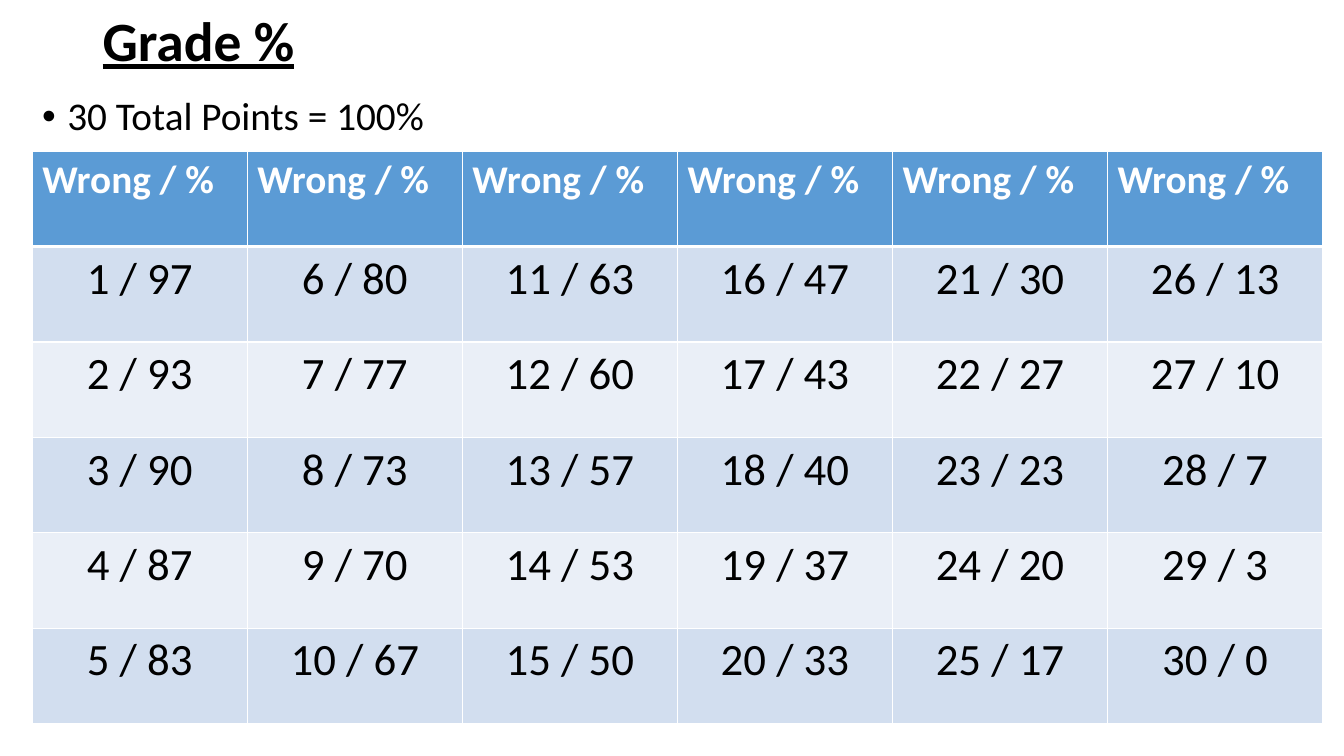
from dataclasses import dataclass

from lxml import etree
from pptx import Presentation
from pptx.dml.color import RGBColor
from pptx.enum.text import MSO_ANCHOR, PP_ALIGN
from pptx.oxml.ns import qn
from pptx.slide import Slide
from pptx.table import _Cell
from pptx.text.text import _Paragraph
from pptx.util import Inches, Pt

LEFT, CENTER = PP_ALIGN.LEFT, PP_ALIGN.CENTER
TOP, MIDDLE = MSO_ANCHOR.TOP, MSO_ANCHOR.MIDDLE

TOTAL_POINTS = 30
COLUMNS = 6
GRADE_ROWS = TOTAL_POINTS // COLUMNS


@dataclass(frozen=True)
class Theme:
    font: str = "Calibri"
    text: str = "000000"
    white: str = "FFFFFF"
    header: str = "5B9BD5"
    bands: tuple[str, str] = ("D2DEEF", "EAEFF7")
    title_size: float = 39.6
    body_size: float = 28
    grade_size: float = 32
    border: float = 1
    header_border: float = 3


@dataclass(frozen=True)
class TextStyle:
    size: float
    color: str
    bold: bool = False
    underline: bool = False
    align: PP_ALIGN = LEFT


@dataclass(frozen=True)
class TextBox:
    text: str
    left: float
    top: float
    width: float
    height: float
    anchor: MSO_ANCHOR
    style: TextStyle
    bulleted: bool = False


THEME = Theme()
HEADER_STYLE = TextStyle(THEME.body_size, THEME.white, bold=True)
GRADE_STYLE = TextStyle(THEME.grade_size, THEME.text, align=CENTER)
TEXT_BOXES = (
    TextBox("Grade %", 0.92, 0.08, 11.5, 0.7, MIDDLE,
            TextStyle(THEME.title_size, THEME.text, bold=True, underline=True)),
    TextBox(f"{TOTAL_POINTS} Total Points = 100%", 0.32, 0.91, 12.1, 0.59, TOP,
            TextStyle(THEME.body_size, THEME.text), bulleted=True),
)


def write_text(para: _Paragraph, text: str, style: TextStyle) -> None:
    para.text = text
    para.alignment = style.align
    font = para.font
    font.name = THEME.font
    font.size = Pt(style.size)
    font.bold = style.bold
    font.underline = style.underline
    font.color.rgb = RGBColor.from_string(style.color)


def add_bullet(para: _Paragraph) -> None:
    properties = para._p.get_or_add_pPr()
    properties.set("marL", str(Inches(0.25)))
    properties.set("indent", str(-Inches(0.25)))
    font = etree.Element(qn("a:buFont"), typeface="Arial")
    bullet = etree.Element(qn("a:buChar"), char="•")
    default_run = properties.find(qn("a:defRPr"))
    default_run.addprevious(font)
    default_run.addprevious(bullet)


def add_text_box(page: Slide, item: TextBox) -> None:
    box = page.shapes.add_textbox(Inches(item.left), Inches(item.top),
                                  Inches(item.width), Inches(item.height))
    frame = box.text_frame
    frame.word_wrap = True
    frame.vertical_anchor = item.anchor
    para = frame.paragraphs[0]
    write_text(para, item.text, item.style)
    para.line_spacing = 0.9
    if item.bulleted:
        para.space_before = Pt(10)
        add_bullet(para)


def set_borders(cell: _Cell, top: float, bottom: float) -> None:
    """Draw white borders; the side lines keep the theme width."""
    widths = {"L": THEME.border, "R": THEME.border, "T": top, "B": bottom}
    properties = cell._tc.get_or_add_tcPr()
    for position, (side, width) in enumerate(widths.items()):
        line = etree.Element(qn(f"a:ln{side}"), w=str(Pt(width)))
        fill = etree.SubElement(line, qn("a:solidFill"))
        etree.SubElement(fill, qn("a:srgbClr"), val=THEME.white)
        properties.insert(position, line)


def grade_text(wrong: int) -> str:
    percent = round(100 * (TOTAL_POINTS - wrong) / TOTAL_POINTS)
    return f"{wrong} / {percent}"


def fill_cell(cell: _Cell, row: int, column: int) -> None:
    is_header = row == 0
    if is_header:
        text, style, color = "Wrong / %", HEADER_STYLE, THEME.header
    else:
        text = grade_text(column * GRADE_ROWS + row)
        style, color = GRADE_STYLE, THEME.bands[(row - 1) % 2]
    write_text(cell.text_frame.paragraphs[0], text, style)
    cell.fill.solid()
    cell.fill.fore_color.rgb = RGBColor.from_string(color)
    set_borders(cell,
                top=THEME.header_border if row == 1 else THEME.border,
                bottom=THEME.header_border if is_header else THEME.border)


def add_grade_table(page: Slide) -> None:
    rows = GRADE_ROWS + 1
    table = page.shapes.add_table(rows, COLUMNS, Inches(0.32), Inches(1.5),
                                  Inches(12.8), Inches(5.68)).table
    table.horz_banding = False
    for row in range(rows):
        for column in range(COLUMNS):
            fill_cell(table.cell(row, column), row, column)


def main() -> None:
    deck = Presentation()
    deck.slide_width, deck.slide_height = Inches(13.33), Inches(7.5)
    page = deck.slides.add_slide(deck.slide_layouts[6])
    for item in TEXT_BOXES:
        add_text_box(page, item)
    add_grade_table(page)
    deck.save("out.pptx")


if __name__ == "__main__":
    main()
